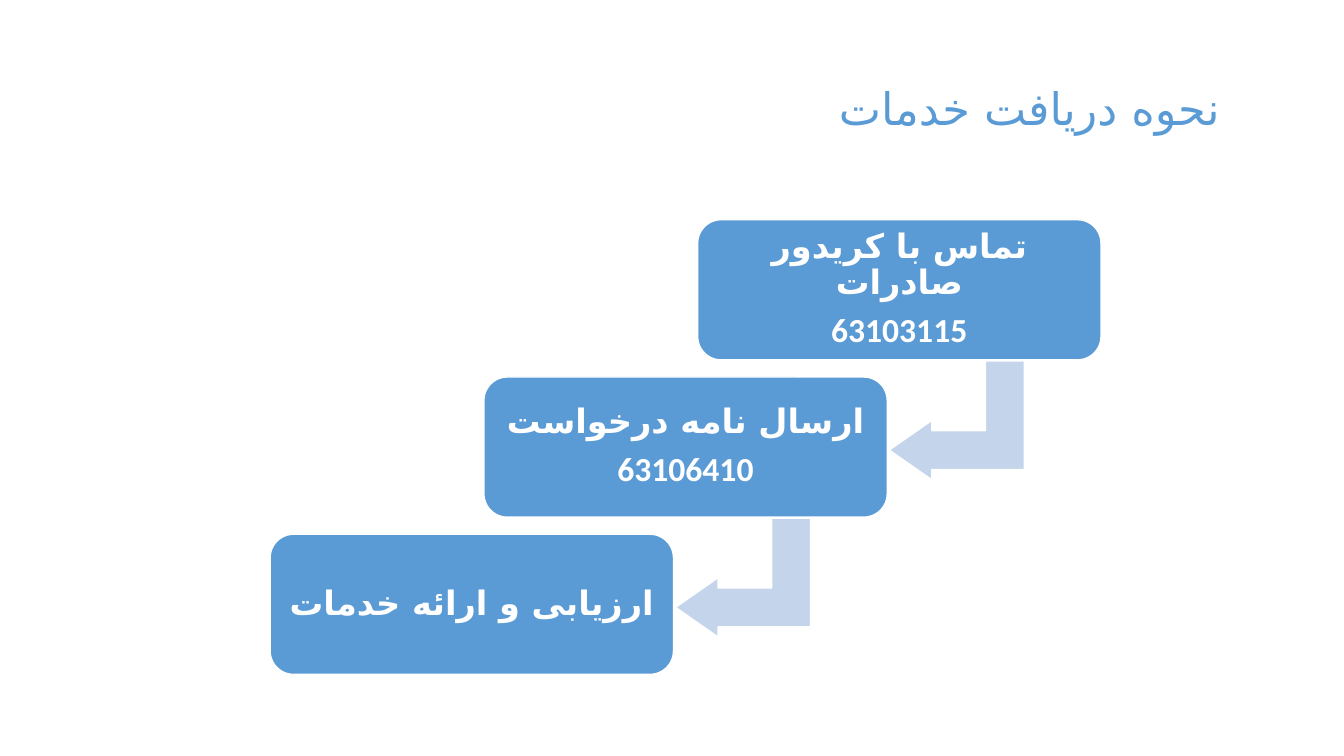
import pptx
import pptx.util
import pptx.dml.color
import pptx.enum.shapes
import pptx.enum.text
import lxml.etree

# Content
FONT, SCRIPT = "Calibri", "DejaVu Sans"
BLUE, PALE, WHITE = "5B9BD5", "C4D5EB", "FFFFFF"
TITLE = "نحوه دریافت خدمات"
STEPS = [
    ["تماس با کریدور صادرات", "63103115"],
    ["ارسال نامه درخواست", "63106410"],
    ["ارزیابی و ارائه خدمات"],
]

# Staircase grid, in inches
LEFT, TOP = 6.92, 2.18
STEP_X, STEP_Y = -2.12, 1.56
BOX_W, BOX_H = 4, 1.39
TURN_X, TURN_Y = 1.9, 1.4
TURN_W, TURN_H = 1.34, 1.18

KINDS = pptx.enum.shapes.MSO_SHAPE
ALIGN = pptx.enum.text.PP_ALIGN
inch = pptx.util.Inches


def color(code):
    return pptx.dml.color.RGBColor.from_string(code)


def add_part(kind, x, y, w, h, fill, adjust):
    part = slide.shapes.add_shape(kind, inch(x), inch(y), inch(w), inch(h))
    part.shadow.inherit = False
    part.fill.solid()
    part.fill.fore_color.rgb = color(fill)
    part.line.color.rgb = color(WHITE)
    part.line.width = pptx.util.Pt(1)
    for i, value in enumerate(adjust):
        part.adjustments[i] = value
    return part


def write(frame, lines, size, code, align, bold=False, after=0):
    frame.word_wrap = True
    frame.vertical_anchor = pptx.enum.text.MSO_ANCHOR.MIDDLE
    frame.margin_left = frame.margin_right = inch(0.1)
    frame.margin_top = frame.margin_bottom = inch(0.1)
    for i, line in enumerate(lines):
        para = frame.paragraphs[0] if i == 0 else frame.add_paragraph()
        para.alignment = align
        para.line_spacing = 0.9
        para.space_after = pptx.util.Pt(after)
        run = para.add_run()
        run.text = line
        run.font.size = pptx.util.Pt(size)
        run.font.bold = bold
        run.font.name = FONT
        run.font.color.rgb = color(code)
        # Font for the Persian letters
        tag = pptx.oxml.ns.qn("a:cs")
        lxml.etree.SubElement(run.font._element, tag, typeface=SCRIPT)


deck = pptx.Presentation()
deck.slide_width, deck.slide_height = inch(13.33), inch(7.5)
slide = deck.slides.add_slide(deck.slide_layouts[6])

# Title, read from right to left
title = slide.shapes.add_textbox(inch(1.2), inch(0.31), inch(11), inch(1.59))
write(title.text_frame, [TITLE], 32, BLUE, ALIGN.RIGHT)
title.text_frame.paragraphs[0]._p.get_or_add_pPr().set("rtl", "1")

# Steps going down to the left, with a bent arrow between each pair
for i, lines in enumerate(STEPS):
    x, y = LEFT + i * STEP_X, TOP + i * STEP_Y
    if i < len(STEPS) - 1:
        turn = add_part(KINDS.BENT_ARROW, x + TURN_X, y + TURN_Y,
                        TURN_W, TURN_H, PALE, [0.328, 0.25, 0.358, 0])
        turn.rotation = 180
    box = add_part(KINDS.ROUNDED_RECTANGLE, x, y, BOX_W, BOX_H, BLUE, [0.167])
    write(box.text_frame, lines, 24, WHITE, ALIGN.CENTER, True, 8.4)

deck.save("out.pptx")
